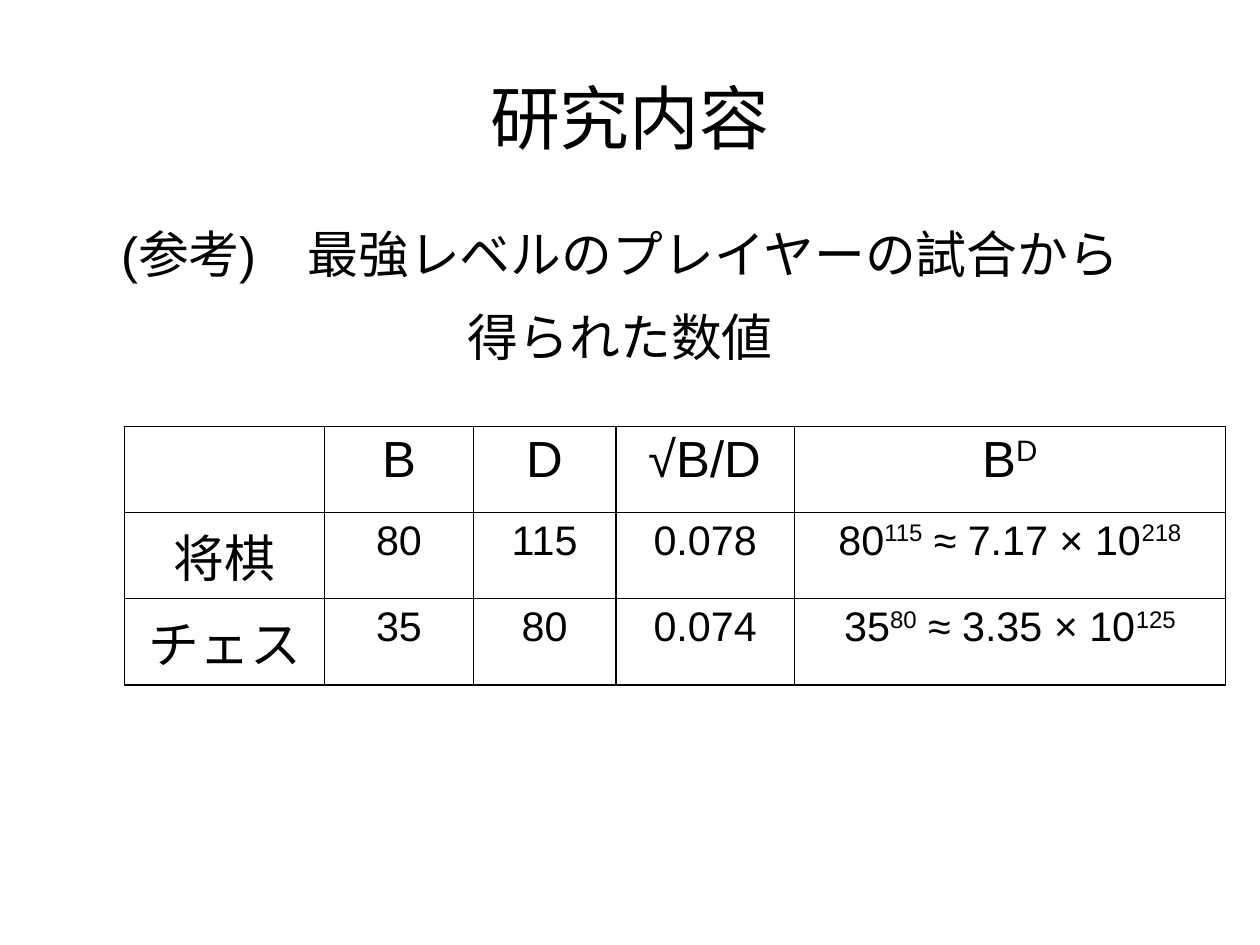
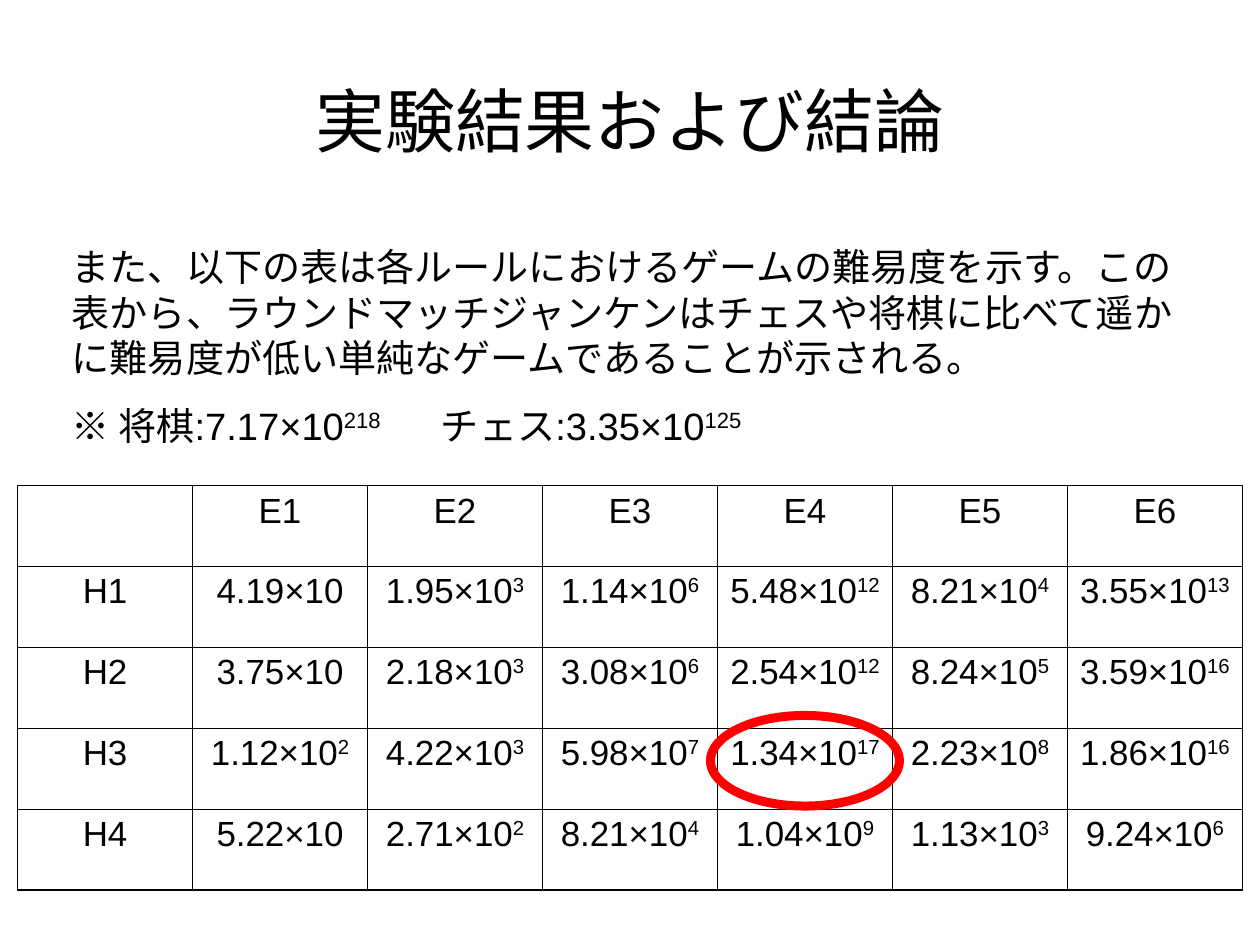
import dataclasses
import typing

import lxml.etree
import pptx
import pptx.dml.color
import pptx.enum.shapes
import pptx.enum.text
import pptx.oxml.ns
import pptx.slide
import pptx.table
import pptx.text.text
import pptx.util

ALIGN = pptx.enum.text.PP_ALIGN
ANCHOR = pptx.enum.text.MSO_ANCHOR


@dataclasses.dataclass(frozen=True)
class Theme:
    font: str = "Arial"
    ink: str = "000000"
    highlight: str = "FF0000"
    title: float = 44
    heading: float = 32
    figure: float = 26
    body: float = 24
    compact: float = 22
    space_after: float = 14.1
    border: float = 1
    ring: float = 5.67


@dataclasses.dataclass(frozen=True)
class Area:
    """A rectangle in percent of the slide's width and height."""
    left: float
    top: float
    width: float
    height: float

    def box(self) -> tuple[int, int, int, int]:
        return (int(SLIDE_WIDTH * self.left / 100), int(SLIDE_HEIGHT * self.top / 100),
                int(SLIDE_WIDTH * self.width / 100), int(SLIDE_HEIGHT * self.height / 100))


@dataclasses.dataclass(frozen=True)
class Passage:
    area: Area
    lines: tuple[str, ...]
    size: float
    align: ALIGN
    anchor: ANCHOR
    tab: float = 0  # percent of the slide's width


@dataclasses.dataclass(frozen=True)
class Grid:
    area: Area
    columns: tuple[float, ...]  # relative widths
    rows: tuple[tuple[str, ...], ...]
    label_size: float
    value_size: float


@dataclasses.dataclass(frozen=True)
class Ring:
    """An ellipse around one cell, measured in cells of an even grid."""
    row: int
    column: int
    width: float
    height: float
    rise: float


@dataclasses.dataclass(frozen=True)
class Page:
    title: str
    title_top: float
    passage: Passage
    grid: Grid
    ring: typing.Optional[Ring] = None


THEME = Theme()
SLIDE_WIDTH = pptx.util.Cm(28)
SLIDE_HEIGHT = pptx.util.Cm(21)
TITLE_AREA = Area(5, 4, 90, 16.7)

# Text between carets is superscript
PAGES = (
    Page(
        "研究内容", 4,
        Passage(Area(2.8, 23.55, 92.9, 66),
                ("(参考)　最強レベルのプレイヤーの試合から", "得られた数値"),
                THEME.heading, ALIGN.CENTER, ANCHOR.TOP),
        Grid(Area(9.9, 45.1, 87.35, 27.4), (1.75, 1.3, 1.25, 1.56, 3.77),
             (("", "B", "D", "√B/D", "B^D^"),
              ("将棋", "80", "115", "0.078", "80^115^ ≈ 7.17 × 10^218^"),
              ("チェス", "35", "80", "0.074", "35^80^ ≈ 3.35 × 10^125^")),
             THEME.heading, THEME.figure),
    ),
    Page(
        "実験結果および結論", 4.25,
        Passage(Area(5.7, 20.9, 89.3, 31.4),
                ("また、以下の表は各ルールにおけるゲームの難易度を示す。この表から、"
                 "ラウンドマッチジャンケンはチェスや将棋に比べて遥かに難易度が低い"
                 "単純なゲームであることが示される。",
                 "※ 将棋:7.17×10^218^\tチェス:3.35×10^125^"),
                THEME.body, ALIGN.LEFT, ANCHOR.MIDDLE, tab=29.3),
        Grid(Area(1.4, 51.4, 97.2, 42.8), (1,) * 7,
             (("", "E1", "E2", "E3", "E4", "E5", "E6"),
              ("H1", "4.19×10", "1.95×10^3^", "1.14×10^6^", "5.48×10^12^", "8.21×10^4^", "3.55×10^13^"),
              ("H2", "3.75×10", "2.18×10^3^", "3.08×10^6^", "2.54×10^12^", "8.24×10^5^", "3.59×10^16^"),
              ("H3", "1.12×10^2^", "4.22×10^3^", "5.98×10^7^", "1.34×10^17^", "2.23×10^8^", "1.86×10^16^"),
              ("H4", "5.22×10", "2.71×10^2^", "8.21×10^4^", "1.04×10^9^", "1.13×10^3^", "9.24×10^6^")),
             THEME.compact, THEME.compact),
        Ring(row=3, column=4, width=1.08, height=1.12, rise=0.1),
    ),
)


def add_xml(parent: typing.Any, tag: str, **attributes: str) -> typing.Any:
    return lxml.etree.SubElement(parent, pptx.oxml.ns.qn(tag), attributes)


def colour(code: str) -> pptx.dml.color.RGBColor:
    return pptx.dml.color.RGBColor.from_string(code)


def write(paragraph: pptx.text.text._Paragraph, text: str, size: float, align: ALIGN) -> None:
    for index, piece in enumerate(text.split("^")):
        if piece:
            run = paragraph.add_run()
            run.text = piece
            if index % 2:
                run._r.get_or_add_rPr().set("baseline", "33000")
    paragraph.alignment = align
    paragraph.font.name = THEME.font
    paragraph.font.size = pptx.util.Pt(size)
    paragraph.font.color.rgb = colour(THEME.ink)


def prepare_frame(frame: pptx.text.text.TextFrame, anchor: ANCHOR) -> None:
    frame.word_wrap = True
    frame.auto_size = pptx.enum.text.MSO_AUTO_SIZE.NONE
    frame.vertical_anchor = anchor
    frame.margin_left = frame.margin_right = frame.margin_top = frame.margin_bottom = 0


def draw_title(slide: pptx.slide.Slide, text: str, top: float) -> None:
    title = slide.shapes.title
    area = dataclasses.replace(TITLE_AREA, top=top)
    title.left, title.top, title.width, title.height = area.box()
    prepare_frame(title.text_frame, ANCHOR.MIDDLE)
    write(title.text_frame.paragraphs[0], text, THEME.title, ALIGN.CENTER)


def draw_passage(slide: pptx.slide.Slide, passage: Passage) -> None:
    frame = slide.shapes.add_textbox(*passage.area.box()).text_frame
    prepare_frame(frame, passage.anchor)
    for index, line in enumerate(passage.lines):
        paragraph = frame.add_paragraph() if index else frame.paragraphs[0]
        if "\t" in line:
            stops = add_xml(paragraph._p.get_or_add_pPr(), "a:tabLst")
            add_xml(stops, "a:tab", pos=str(int(SLIDE_WIDTH * passage.tab / 100)), algn="l")
        write(paragraph, line, passage.size, passage.align)
        paragraph.space_after = pptx.util.Pt(THEME.space_after)


def outline_cell(cell: pptx.table._Cell) -> None:
    properties = cell._tc.get_or_add_tcPr()
    for side in ("a:lnL", "a:lnR", "a:lnT", "a:lnB"):
        line = add_xml(properties, side, w=str(int(pptx.util.Pt(THEME.border))))
        add_xml(add_xml(line, "a:solidFill"), "a:srgbClr", val=THEME.ink)
    cell.fill.background()


def draw_grid(slide: pptx.slide.Slide, grid: Grid) -> None:
    left, top, width, height = grid.area.box()
    table = slide.shapes.add_table(len(grid.rows), len(grid.columns), left, top, width, height).table
    table.first_row = table.horz_banding = False
    for column, share in zip(table.columns, grid.columns):
        column.width = int(width * share / sum(grid.columns))
    for row, texts in enumerate(grid.rows):
        for column, text in enumerate(texts):
            cell = table.cell(row, column)
            outline_cell(cell)
            size = grid.value_size if row and column else grid.label_size
            write(cell.text_frame.paragraphs[0], text, size, ALIGN.CENTER)


def draw_ring(slide: pptx.slide.Slide, ring: Ring, grid: Grid) -> None:
    left, top, width, height = grid.area.box()
    cell_width, cell_height = width / len(grid.columns), height / len(grid.rows)
    centre_x = left + (ring.column + 0.5) * cell_width
    centre_y = top + (ring.row + 0.5 - ring.rise) * cell_height
    ring_width, ring_height = ring.width * cell_width, ring.height * cell_height
    ellipse = slide.shapes.add_shape(
        pptx.enum.shapes.MSO_SHAPE.OVAL,
        int(centre_x - ring_width / 2), int(centre_y - ring_height / 2),
        int(ring_width), int(ring_height))
    ellipse.shadow.inherit = False
    ellipse.fill.background()
    ellipse.line.color.rgb = colour(THEME.highlight)
    ellipse.line.width = pptx.util.Pt(THEME.ring)


def main() -> None:
    deck = pptx.Presentation()
    deck.slide_width, deck.slide_height = SLIDE_WIDTH, SLIDE_HEIGHT
    title_only = deck.slide_layouts.get_by_name("Title Only")
    for page in PAGES:
        slide = deck.slides.add_slide(title_only)
        draw_title(slide, page.title, page.title_top)
        draw_passage(slide, page.passage)
        draw_grid(slide, page.grid)
        if page.ring:
            draw_ring(slide, page.ring, page.grid)
    deck.save("out.pptx")


if __name__ == "__main__":
    main()
